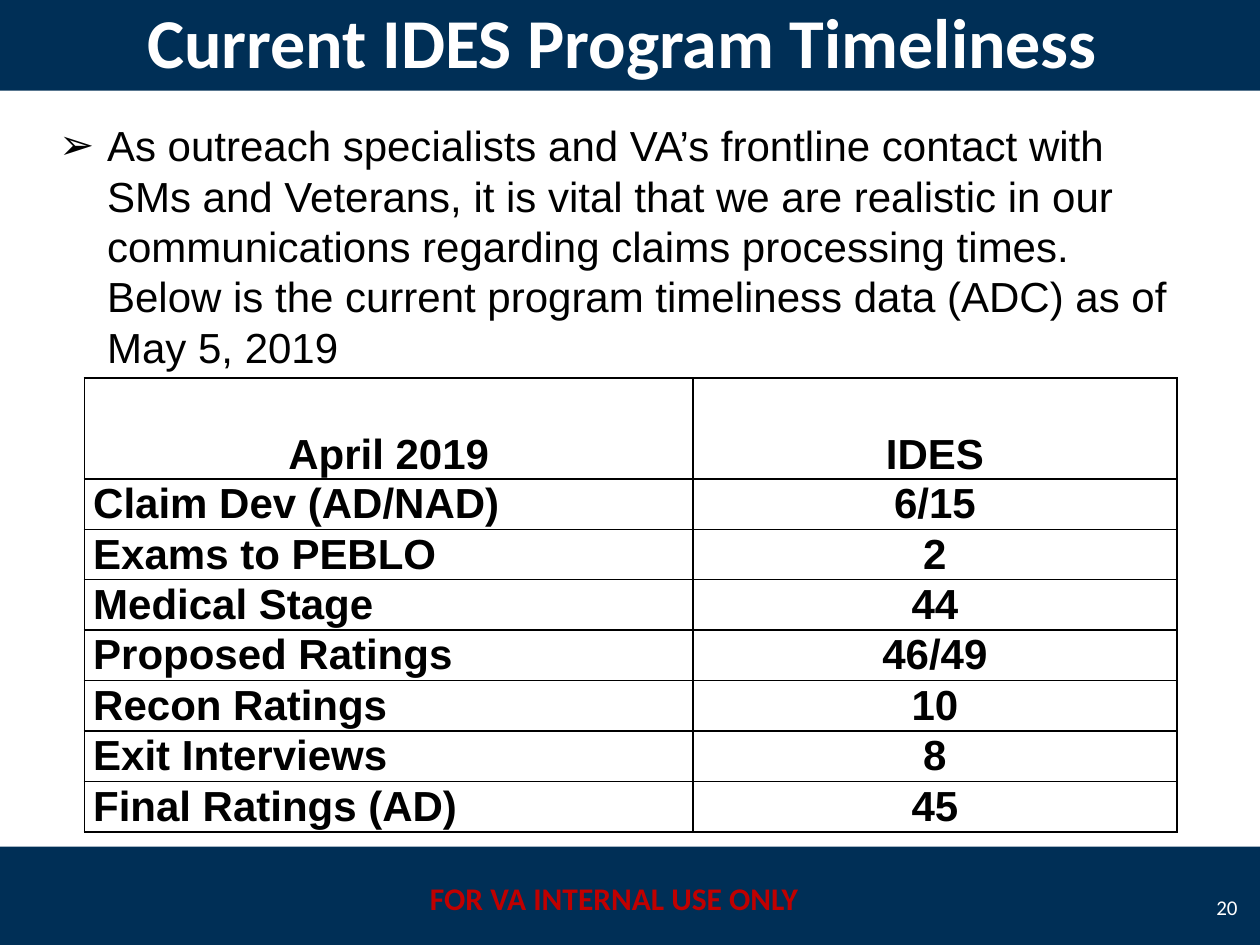
from lxml.etree import SubElement
from pptx import Presentation
from pptx.dml.color import RGBColor
from pptx.enum.shapes import MSO_SHAPE as Shape
from pptx.enum.text import MSO_ANCHOR as Anchor, MSO_AUTO_SIZE as AutoSize, PP_ALIGN as Align
from pptx.oxml.ns import qn
from pptx.util import Inches, Pt

NAVY, WHITE, BLACK, RED = "002F56", "FFFFFF", "000000", "C00000"
TITLE = "Current IDES Program Timeliness "
GUIDANCE = (
    "As outreach specialists and VA’s frontline contact with SMs and Veterans, "
    "it is vital that we are realistic in our communications regarding claims "
    "processing times. Below is the current program timeliness data (ADC) as of May 5, 2019"
)
TIMELINESS = [
    ("April 2019", "IDES"),
    ("Claim Dev (AD/NAD)", "6/15"),
    ("Exams to PEBLO", "2"),
    ("Medical Stage", "44"),
    ("Proposed Ratings", "46/49"),
    ("Recon Ratings", "10"),
    ("Exit Interviews", "8"),
    ("Final Ratings (AD)", "45"),
]
COLUMN_WIDTHS = (4.83, 3.84)
HEADER_HEIGHT, ROW_HEIGHT = 0.8, 0.4
BAR_TOPS = (6.72, -0.08)
MARKINGS = [
    ("FOR VA INTERNAL USE ONLY", (3.25, 6.93, 3.25, 0.4), 18, RED, True, Align.CENTER, Anchor.TOP),
    ("20", (9.5, 7, 0.42, 0.4), 12, WHITE, False, Align.RIGHT, Anchor.MIDDLE),
]


def rgb(code):
    return RGBColor.from_string(code)


def write(frame, text, font, size, color, bold=False, align=Align.LEFT):
    frame.text = text
    paragraph = frame.paragraphs[0]
    paragraph.alignment = align
    style = paragraph.runs[0].font
    style.name, style.size, style.bold = font, Pt(size), bold
    style.color.rgb = rgb(color)
    return paragraph


def place(shape, box):
    shape.left, shape.top, shape.width, shape.height = map(Inches, box)


def add_bar(slide, top):
    bar = slide.shapes.add_shape(Shape.RECTANGLE, 0, Inches(top), Inches(10), Inches(0.8))
    bar.shadow.inherit = False
    bar.fill.solid()
    bar.fill.fore_color.rgb = rgb(NAVY)
    bar.line.fill.background()
    bar.element.getparent().insert(2, bar.element)


def add_marking(slide, text, box, size, color, bold, align, anchor):
    frame = slide.shapes.add_textbox(*map(Inches, box)).text_frame
    frame.word_wrap = True
    frame.vertical_anchor = anchor
    write(frame, text, "Calibri", size, color, bold, align)


def fill_title(title):
    place(title, (0, -0.08, 10, 0.8))
    title.text_frame.auto_size = AutoSize.NONE
    title.text_frame.vertical_anchor = Anchor.MIDDLE
    write(title.text_frame, TITLE, "Calibri", 40, WHITE, True, Align.CENTER)


def fill_guidance(body):
    place(body, (0.37, 0.9, 9.17, 2.12))
    body.text_frame.auto_size = AutoSize.NONE
    paragraph = write(body.text_frame, GUIDANCE, "Arial", 24, BLACK)
    paragraph.space_before = Pt(0)
    properties = paragraph._p.get_or_add_pPr()
    properties.set("marL", str(Inches(0.38)))
    properties.set("indent", str(Inches(-0.38)))
    SubElement(properties, qn("a:buFont"), typeface="Wingdings")
    properties[-1].set("typeface", "Arial")
    SubElement(properties, qn("a:buChar"), char="➢")


def add_borders(cell):
    properties = cell._tc.get_or_add_tcPr()
    for side in ("lnL", "lnR", "lnT", "lnB"):
        line = SubElement(properties, qn(f"a:{side}"), w=str(Pt(1)))
        SubElement(SubElement(line, qn("a:solidFill")), qn("a:srgbClr"), val=BLACK)


def add_timeliness(slide):
    heights = [HEADER_HEIGHT] + [ROW_HEIGHT] * (len(TIMELINESS) - 1)
    box = (0.67, 3, sum(COLUMN_WIDTHS), sum(heights))
    table = slide.shapes.add_table(
        len(TIMELINESS), len(COLUMN_WIDTHS), *map(Inches, box)
    ).table
    table.first_row = table.horz_banding = False
    for column, width in zip(table.columns, COLUMN_WIDTHS):
        column.width = Inches(width)
    for r, (stage, height) in enumerate(zip(TIMELINESS, heights)):
        table.rows[r].height = Inches(height)
        for c, text in enumerate(stage):
            cell = table.cell(r, c)
            add_borders(cell)
            cell.fill.background()
            cell.margin_left = cell.margin_right = Inches(0.07)
            cell.margin_top = cell.margin_bottom = 0
            cell.vertical_anchor = Anchor.MIDDLE if r else Anchor.BOTTOM
            align = Align.LEFT if r and c == 0 else Align.CENTER
            write(cell.text_frame, text, "Arial", 24, BLACK, True, align)


def main():
    """Build the program timeliness slide."""
    deck = Presentation()
    deck.slide_width, deck.slide_height = Inches(10), Inches(7.5)
    slide = deck.slides.add_slide(deck.slide_layouts[1])
    fill_title(slide.shapes.title)
    fill_guidance(slide.placeholders[1])
    for top in BAR_TOPS:
        add_bar(slide, top)
    for marking in MARKINGS:
        add_marking(slide, *marking)
    add_timeliness(slide)
    deck.save("out.pptx")


if __name__ == "__main__":
    main()
